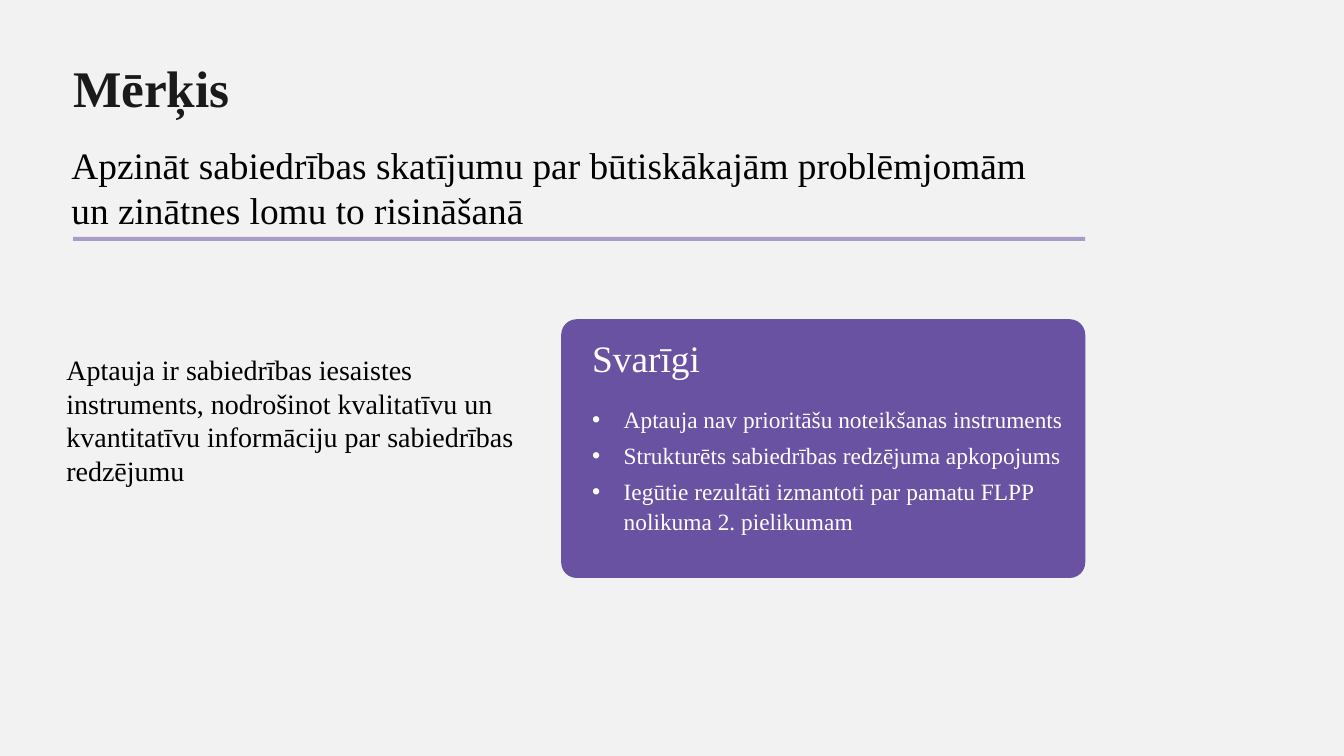
from lxml import etree
from pptx import Presentation
from pptx.dml import color
from pptx.enum import shapes, text
from pptx.oxml import ns
from pptx.util import Pt

PURPLE, PAGE, DARK, BLACK, WHITE = "624A9E", "F2F2F2", "1A1A1A", "000000", "FFFFFF"


def rgb(hex_text):
    return color.RGBColor.from_string(hex_text)


class Deck:
    font_name = "Times New Roman"

    def __init__(self, width, height):
        self.prs = Presentation()
        self.prs.slide_width, self.prs.slide_height = Pt(width), Pt(height)

    def add_slide(self, background):
        self.s = self.prs.slides.add_slide(self.prs.slide_layouts[5])
        fill = self.s.background.fill
        fill.solid()
        fill.fore_color.rgb = rgb(background)

    def set_text(self, sp, lines, size, hex_text, bold=False, bullet_indent=0, **spacing):
        tf = sp.text_frame
        frame = dict(word_wrap=True, auto_size=text.MSO_AUTO_SIZE.NONE,
                     vertical_anchor=text.MSO_ANCHOR.TOP, margin_left=0,
                     margin_right=0, margin_top=0, margin_bottom=0)
        for key, value in frame.items():
            setattr(tf, key, value)
        for i, line in enumerate(lines):
            p = tf.paragraphs[0] if i == 0 else tf.add_paragraph()
            p.alignment = text.PP_ALIGN.LEFT
            for key, value in spacing.items():
                setattr(p, key, Pt(value))
            if bullet_indent:
                self.bullet(p, bullet_indent)
            r = p.add_run()
            r.text = line
            for key, value in dict(name=self.font_name, size=Pt(size), bold=bold).items():
                setattr(r.font, key, value)
            r.font.color.rgb = rgb(hex_text)

    def bullet(self, p, indent):
        pPr = p._p.get_or_add_pPr()
        pPr.set("marL", str(Pt(indent)))
        pPr.set("indent", str(-Pt(indent)))
        etree.SubElement(pPr, ns.qn("a:buFont"), typeface="Arial")
        etree.SubElement(pPr, ns.qn("a:buChar"), char="•")

    def title(self, box, line, **style):
        sp = self.s.shapes.title
        for key, value in zip(("left", "top", "width", "height"), box):
            setattr(sp, key, Pt(value))
        self.set_text(sp, [line], **style)

    def textbox(self, box, lines, **style):
        self.set_text(self.s.shapes.add_textbox(*map(Pt, box)), lines, **style)

    def panel(self, kind, box, hex_text, opacity, corner=None):
        sp = self.s.shapes.add_shape(kind, *map(Pt, box))
        sp.shadow.inherit = False
        sp.line.fill.background()
        sp.fill.solid()
        sp.fill.fore_color.rgb = rgb(hex_text)
        tint = sp._element.spPr.find(".//" + ns.qn("a:srgbClr"))
        etree.SubElement(tint, ns.qn("a:alpha"), val=str(opacity * 1000))
        if corner is not None:
            sp.adjustments[0] = corner


def main():
    deck = Deck(1152, 648)
    deck.add_slide(PAGE)
    left, right = 62.6, 930.2
    card_left, card_text = 481, 507.6

    # Heading and goal
    deck.title((left, 77, 195, 33), "Mērķis", size=44, hex_text=DARK, bold=True,
               line_spacing=24)
    deck.textbox((61.2, 121.7, right - left, 77),
                 ["Apzināt sabiedrības skatījumu par būtiskākajām problēmjomām",
                  "un zinātnes lomu to risināšanā"], size=32, hex_text=BLACK)
    deck.panel(shapes.MSO_SHAPE.RECTANGLE, (left, 203, right - left, 3.6), PURPLE, 50)

    # Card with the key points
    deck.panel(shapes.MSO_SHAPE.ROUNDED_RECTANGLE,
               (card_left, 273.6, right - card_left, 221.8), PURPLE, 95, 0.06)
    deck.textbox((card_text, 301.7, 250, 38), ["Svarīgi"], size=32, hex_text=WHITE,
                 line_spacing=24)
    deck.textbox((card_text, 346.3, 416.2, 141),
                 ["Aptauja nav prioritāšu noteikšanas instruments",
                  "Strukturēts sabiedrības redzējuma apkopojums",
                  "Iegūtie rezultāti izmantoti par pamatu FLPP nolikuma 2. pielikumam"],
                 size=20, hex_text=WHITE, bullet_indent=27, line_spacing=25, space_after=6)

    # Survey description
    deck.textbox((56.9, 302.4, 406, 117),
                 ["Aptauja ir sabiedrības iesaistes instruments, nodrošinot kvalitatīvu "
                  "un kvantitatīvu informāciju par sabiedrības redzējumu"],
                 size=24, hex_text=BLACK)

    deck.prs.save("out.pptx")


if __name__ == "__main__":
    main()
